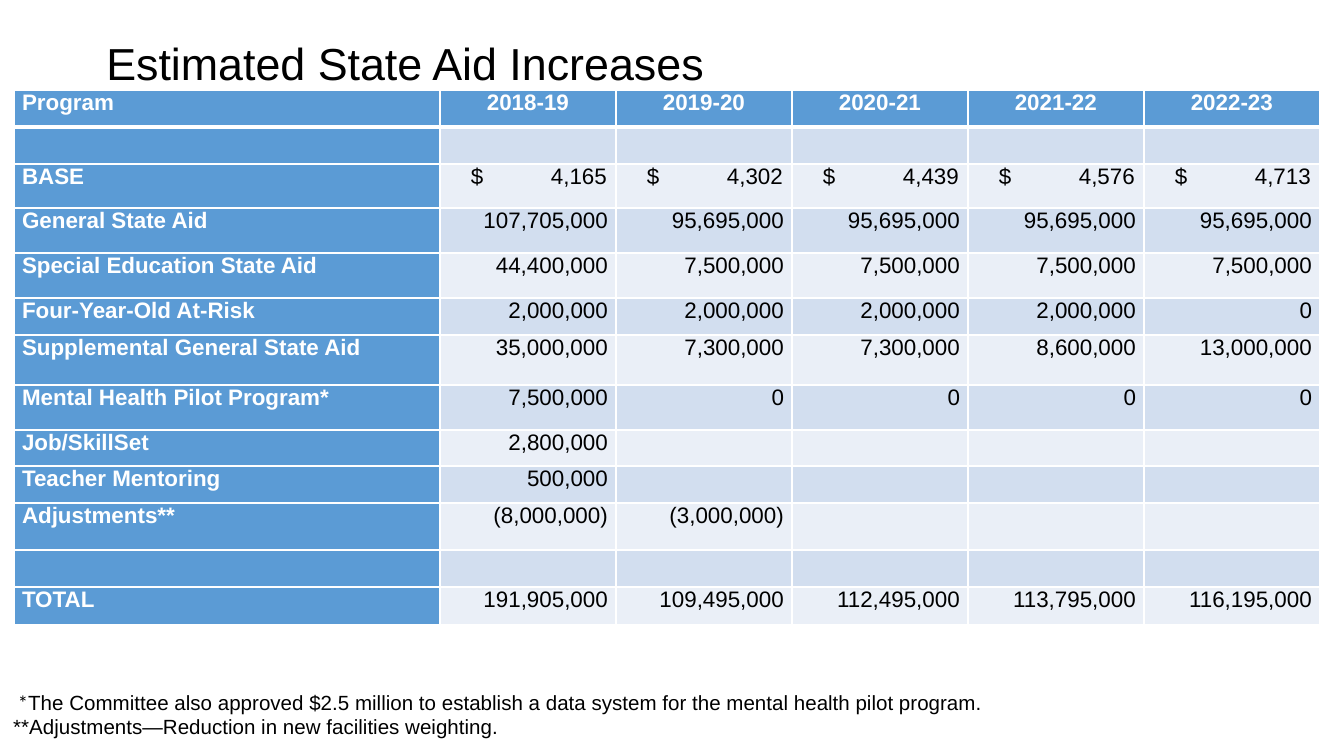
from lxml.etree import SubElement
from pptx import Presentation
from pptx.dml.color import RGBColor
from pptx.enum.text import MSO_ANCHOR as Anchor, PP_ALIGN as Align
from pptx.oxml.ns import qn
from pptx.util import Emu, Pt

PX = 914400 / 134.4
THEME = {
    "font": "Arial", "mark_font": "Calibri",
    "text": "000000", "head": "5B9BD5", "white": "FFFFFF",
    "bands": ("EAEFF7", "D2DEEF"),
    "title_pt": 24, "cell_pt": 12, "note_pt": 11,
    "rule_pt": 1, "head_rule_pt": 3,
}


def px(length):
    return Emu(round(length * PX))


def add_text(paragraph, text, size, color=THEME["text"], bold=False, font=THEME["font"]):
    run = paragraph.add_run()
    run.text = text
    run.font.color.rgb = RGBColor.from_string(color)
    for attribute, value in {"size": Pt(size), "bold": bold, "name": font}.items():
        setattr(run.font, attribute, value)


prs = Presentation()
prs.slide_width, prs.slide_height = px(1344), px(756)
slide = prs.slides.add_slide(prs.slide_layouts[6])

# Title
title = slide.shapes.add_textbox(px(93), px(20), px(1158), px(91)).text_frame
title.word_wrap = True
title.vertical_anchor = Anchor.MIDDLE
title.paragraphs[0].line_spacing = 0.9
add_text(title.paragraphs[0], "Estimated State Aid Increases", THEME["title_pt"])

# State aid by program and year; each row starts with its height
aid_rows = [
    (37, "Program", "2018-19", "2019-20", "2020-21", "2021-22", "2022-23"),
    (37,),
    (44, "BASE", "$\t4,165", "$\t4,302", "$\t4,439", "$\t4,576", "$\t4,713"),
    (45, "General State Aid", "107,705,000", *["95,695,000"] * 4),
    (45, "Special Education State Aid", "44,400,000", *["7,500,000"] * 4),
    (37, "Four-Year-Old At-Risk", *["2,000,000"] * 4, "0"),
    (50, "Supplemental General State Aid",
     "35,000,000", "7,300,000", "7,300,000", "8,600,000", "13,000,000"),
    (45, "Mental Health Pilot Program*", "7,500,000", *["0"] * 4),
    (36, "Job/SkillSet", "2,800,000"),
    (37, "Teacher Mentoring", "500,000"),
    (47, "Adjustments**", "(8,000,000)", "(3,000,000)"),
    (37,),
    (38, "TOTAL", "191,905,000", "109,495,000", "112,495,000", "113,795,000", "116,195,000"),
]
column_widths = [426] + [176] * 5
cell_inset, dollar_inset = 8, 31
aid_table = slide.shapes.add_table(
    len(aid_rows), len(column_widths), px(14), px(90),
    px(sum(column_widths)), px(sum(row[0] for row in aid_rows))).table
aid_table.horz_banding = False
for column, width in zip(aid_table.columns, column_widths):
    column.width = px(width)

for r, (height, *entries) in enumerate(aid_rows):
    aid_table.rows[r].height = px(height)
    entries += [""] * (len(column_widths) - len(entries))
    for c, entry in enumerate(entries):
        cell = aid_table.cell(r, c)
        is_head = r == 0 or c == 0
        is_dollar = "\t" in entry
        margins = {"margin_left": dollar_inset if is_dollar else cell_inset,
                   "margin_right": cell_inset, "margin_top": 0, "margin_bottom": 0}
        for attribute, value in margins.items():
            setattr(cell, attribute, px(value))

        paragraph = cell.text_frame.paragraphs[0]
        if c == 0 or is_dollar:
            paragraph.alignment = Align.LEFT
        else:
            paragraph.alignment = Align.CENTER if r == 0 else Align.RIGHT
        if is_dollar:
            tabs = SubElement(paragraph._p.get_or_add_pPr(), qn("a:tabLst"))
            amount_edge = px(column_widths[c] - dollar_inset - cell_inset - 1)
            SubElement(tabs, qn("a:tab"), pos=str(amount_edge), algn="r")
        if entry:
            add_text(paragraph, entry, THEME["cell_pt"],
                     THEME["white" if is_head else "text"], is_head)
        else:
            SubElement(paragraph._p, qn("a:endParaRPr"), sz=str(THEME["cell_pt"] * 100))

        # Borders come before the fill in the cell properties
        properties = cell._tc.get_or_add_tcPr()
        for side in "LRTB":
            under_head = (r, side) in ((0, "B"), (1, "T"))
            weight = Pt(THEME["head_rule_pt" if under_head else "rule_pt"])
            border = SubElement(properties, qn(f"a:ln{side}"), w=str(weight))
            SubElement(SubElement(border, qn("a:solidFill")), qn("a:srgbClr"), val=THEME["white"])
        cell.fill.solid()
        cell.fill.fore_color.rgb = RGBColor.from_string(
            THEME["head"] if is_head else THEME["bands"][r % 2])

# Footnotes
notes = slide.shapes.add_textbox(px(0), px(683), px(1009), px(63)).text_frame
notes.word_wrap = True
pilot_note, adjustment_note = notes.paragraphs[0], notes.add_paragraph()
add_text(pilot_note, " *", THEME["note_pt"], font=THEME["mark_font"])
add_text(pilot_note, "The Committee also approved $2.5 million to establish a data system "
         "for the mental health pilot program.", THEME["note_pt"])
add_text(adjustment_note, "**Adjustments—Reduction in new facilities weighting.", THEME["note_pt"])

prs.save("out.pptx")
